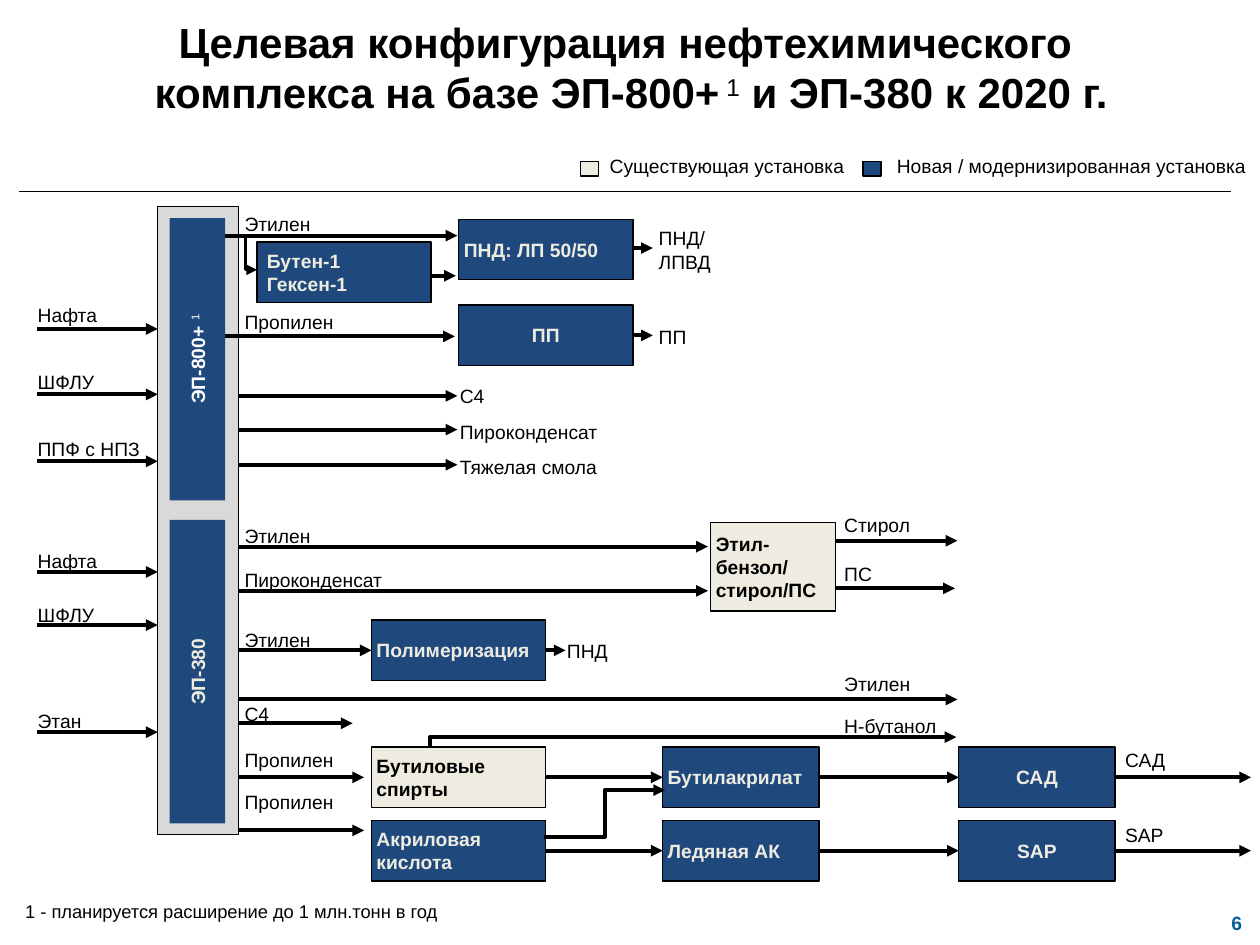
from lxml import etree
from pptx import Presentation
from pptx import util as u
from pptx.dml.color import RGBColor
from pptx.enum import shapes, text
from pptx.oxml import ns

Cm, Pt = u.Cm, u.Pt
LEFT, CENTER, RIGHT = text.PP_ALIGN.LEFT, text.PP_ALIGN.CENTER, text.PP_ALIGN.RIGHT
TOP, MIDDLE = text.MSO_ANCHOR.TOP, text.MSO_ANCHOR.MIDDLE


class Theme:
    font = "Arial"
    black = RGBColor.from_string("000000")
    white = RGBColor.from_string("FFFFFF")
    cream = RGBColor.from_string("EEECE1")
    navy = RGBColor.from_string("1F497D")
    grey = RGBColor.from_string("D9D9D9")
    page = RGBColor.from_string("005E9D")
    title, body, note = 24, 11, 10.5
    thin, medium, thick = 0.75, 1.5, 2.25


prs = Presentation()
prs.slide_width, prs.slide_height = Cm(25.4), Cm(19.05)
s = prs.slides.add_slide(prs.slide_layouts[6])


def write(sp, content, size=Theme.body, color=Theme.black, bold=False,
          align=LEFT, anchor=TOP, inset=(0, 0)):
    """Fill a shape with text: one paragraph a line, ^...^ is superscript."""
    tf = sp.text_frame
    tf.word_wrap = True
    tf.vertical_anchor = anchor
    tf.margin_left = tf.margin_right = Cm(inset[0])
    tf.margin_top = tf.margin_bottom = Cm(inset[1])
    for i, row in enumerate(content.split("\n")):
        p = tf.add_paragraph() if i else tf.paragraphs[0]
        p.alignment = align
        for j, part in enumerate(row.split("^")):
            if not part:
                continue
            r = p.add_run()
            r.text = part
            raised = j % 2 == 1
            r.font.name, r.font.size = Theme.font, Pt(size)
            r.font.bold = bold and not raised
            r.font.color.rgb = color
            if raised:
                r._r.get_or_add_rPr().set("baseline", "30000")


def connect(x1, y1, x2, y2, kind="line", width=Theme.thick, head=True):
    """Draw a connector; a "corner" goes vertically first, then right."""
    if kind == "corner":
        # A corner is the preset turned by 270 degrees about its centre
        cx, cy, dx, dy = (x1 + x2) / 2, (y1 + y2) / 2, x2 - x1, y2 - y1
        x1, y1, x2, y2 = cx + dy / 2, cy - dx / 2, cx - dy / 2, cy + dx / 2
    preset = shapes.MSO_CONNECTOR.STRAIGHT if kind == "line" else shapes.MSO_CONNECTOR.ELBOW
    c = s.shapes.add_connector(preset, Cm(x1), Cm(y1), Cm(x2), Cm(y2))
    spPr = c._element.spPr
    if kind == "corner":
        spPr.find(ns.qn("a:xfrm")).set("rot", "16200000")
        spPr.find(ns.qn("a:prstGeom")).set("prst", "bentConnector2")
    c.line.color.rgb = Theme.black
    c.line.width = Pt(width)
    if head:
        etree.SubElement(spPr.find(ns.qn("a:ln")), ns.qn("a:tailEnd"), type="triangle")
    etree.SubElement(spPr, ns.qn("a:effectLst"))


# Flows that start under the units: from x, to x, heights
flows = [
    (0.74, 3.18, (6.63, 7.95, 9.3, 11.53, 12.6, 14.76)),
    (12.4, 13.16, (5, 6.76)),
    (4.34, 9.22, (7.98, 8.66, 9.37)),
    (4.5, 7.49, (13.11,)),
    (4.5, 14.27, (11.02, 11.91)),
    (4.5, 7.11, (14.58,)),
    (4.5, 19.3, (14.1,)),
    (10.16, 11.4, (13.11,)),
    (10.97, 13.36, (15.67, 17.15)),
    (16.51, 19.33, (15.67, 17.15)),
    (16.51, 19.3, (10.9,)),
    (16.48, 19.25, (11.86,)),
    (22.2, 25.22, (15.67, 17.15)),
]
for x1, x2, heights in flows:
    for y in heights:
        connect(x1, y, x2, y)
connect(4.95, 4.78, 5.18, 5.44, "corner", Theme.medium)
connect(4.17, 16.51, 7.34, 15.67, "corner")
connect(4.17, 16.51, 7.34, 16.74, "corner")
connect(8.66, 15.21, 19.28, 14.86, "corner")

# Units: text, left, top, width, height, fill, text colour, align, side inset
existing = (Theme.cream, Theme.black)
new = (Theme.navy, Theme.cream)
WIDE, NARROW, HIGH = 3.51, 3.15, 1.22
units = [
    ("", 3.18, 4.17, 1.63, 12.65, (Theme.grey, Theme.black), LEFT, 0.1),
    ("ПНД: ЛП 50/50", 9.25, 4.42, WIDE, HIGH, new, LEFT, 0.1),
    ("ПП", 9.25, 6.15, WIDE, HIGH, new, CENTER, 0.1),
    ("Этил-бензол/ стирол/ПС", 14.33, 10.54, 2.51, 1.78, existing, LEFT, 0.1),
    ("Полимеризация", 7.49, 12.5, WIDE, HIGH, new, LEFT, 0.1),
    ("Бутен-1\nГексен-1", 5.18, 4.88, WIDE, HIGH, new, LEFT, 0.2),
    ("Бутиловые спирты", 7.49, 15.06, WIDE, HIGH, existing, LEFT, 0.1),
    ("Акриловая кислота", 7.49, 16.54, WIDE, HIGH, new, LEFT, 0.1),
    ("Бутилакрилат", 13.36, 15.06, NARROW, HIGH, new, LEFT, 0.1),
    ("Ледяная АК", 13.36, 16.54, NARROW, HIGH, new, LEFT, 0.1),
    ("САД", 19.33, 15.06, NARROW, HIGH, new, CENTER, 0.1),
    ("SAP", 19.33, 16.54, NARROW, HIGH, new, CENTER, 0.1),
    # Legend keys
    ("", 11.71, 3.25, 0.36, 0.3, existing, LEFT, 0.1),
    ("", 17.4, 3.25, 0.36, 0.3, new, LEFT, 0.1),
]
for name, x, y, w, h, (fill, ink), align, side in units:
    sp = s.shapes.add_shape(shapes.MSO_SHAPE.RECTANGLE, Cm(x), Cm(y), Cm(w), Cm(h))
    sp.shadow.inherit = False
    sp.fill.solid()
    sp.fill.fore_color.rgb = fill
    sp.line.color.rgb = Theme.black
    sp.line.width = Pt(Theme.thin)
    if name:
        write(sp, name, color=ink, bold=True, align=align, anchor=MIDDLE, inset=(side, 0.2))

# Flows over the grey column and into the acrylate unit
connect(4.34, 4.75, 9.22, 4.75)
connect(4.34, 6.78, 9.17, 6.78)
connect(6.86 + 1.83, 5.56, 9.19, 5.56)
connect(10.97, 16.87, 13.41, 15.93, "elbow")

# Vertical cracker bars: text, centre height, length, text colour
for name, cy, length, ink in [("ЭП-800+ ^1^", 7.24, 5.69, Theme.white),
                              ("ЭП-380", 13.54, 6.12, Theme.cream)]:
    sp = s.shapes.add_shape(shapes.MSO_SHAPE.RECTANGLE, Cm(3.98 - length / 2),
                            Cm(cy - 0.56), Cm(length), Cm(1.12))
    sp.rotation = 270
    sp.shadow.inherit = False
    sp.fill.solid()
    sp.fill.fore_color.rgb = Theme.navy
    sp.line.fill.background()
    write(sp, name, color=ink, bold=True, align=CENTER, anchor=MIDDLE, inset=(0.2, 0.2))

# Flow labels by column: left, width, (top, text)
columns = [
    (0.76, 2.5, [(6.12, "Нафта"), (7.47, "ШФЛУ"), (8.81, "ППФ с НПЗ"),
                 (11.07, "Нафта"), (12.17, "ШФЛУ"), (14.3, "Этан")]),
    (4.93, 2.8, [(4.27, "Этилен"), (6.25, "Пропилен"), (10.57, "Этилен"),
                 (11.46, "Пироконденсат"), (12.67, "Этилен"), (14.15, "С4"),
                 (15.09, "Пропилен"), (15.93, "Пропилен")]),
    (9.27, 4.45, [(7.75, "C4"), (8.48, "Пироконденсат"), (9.17, "Тяжелая смола")]),
    (11.43, 2.97, [(12.88, "ПНД")]),
    (13.28, 2.9, [(4.57, "ПНД/\nЛПВД"), (6.55, "ПП")]),
    (17.02, 2.16, [(10.34, "Стирол"), (11.33, "ПС"), (13.56, "Этилен"),
                   (14.4, "Н-бутанол")]),
    (22.68, 2.26, [(15.09, "САД"), (16.59, "SAP")]),
    # Legend
    (12.29, 5.05, [(3.12, "Существующая установка")]),
    (18.08, 7.32, [(3.12, "Новая / модернизированная установка")]),
]
for x, w, labels in columns:
    for y, label in labels:
        h = 0.47 * len(label.split("\n"))
        write(s.shapes.add_textbox(Cm(x), Cm(y), Cm(w), Cm(h)), label)

# Title, rule, footnote and page number
sp = s.shapes.add_textbox(Cm(0.51), Cm(0.33), Cm(24.43), Cm(2.06))
write(sp, "Целевая конфигурация нефтехимического \n"
          "комплекса на базе ЭП-800+^ 1^ и ЭП-380 к 2020 г.",
      size=Theme.title, bold=True, align=CENTER)
connect(0.38, 3.86, 24.82, 3.86, width=Theme.thin, head=False)
sp = s.shapes.add_textbox(Cm(0.51), Cm(18.14), Cm(24.08), Cm(0.46))
write(sp, "1 - планируется расширение до 1 млн.тонн в год", size=Theme.note)
sp = s.shapes.add_textbox(Cm(20.19), Cm(18.14), Cm(5.08), Cm(0.91))
write(sp, "6", color=Theme.page, bold=True, align=RIGHT, anchor=MIDDLE, inset=(0.23, 0.1))

prs.save("out.pptx")
